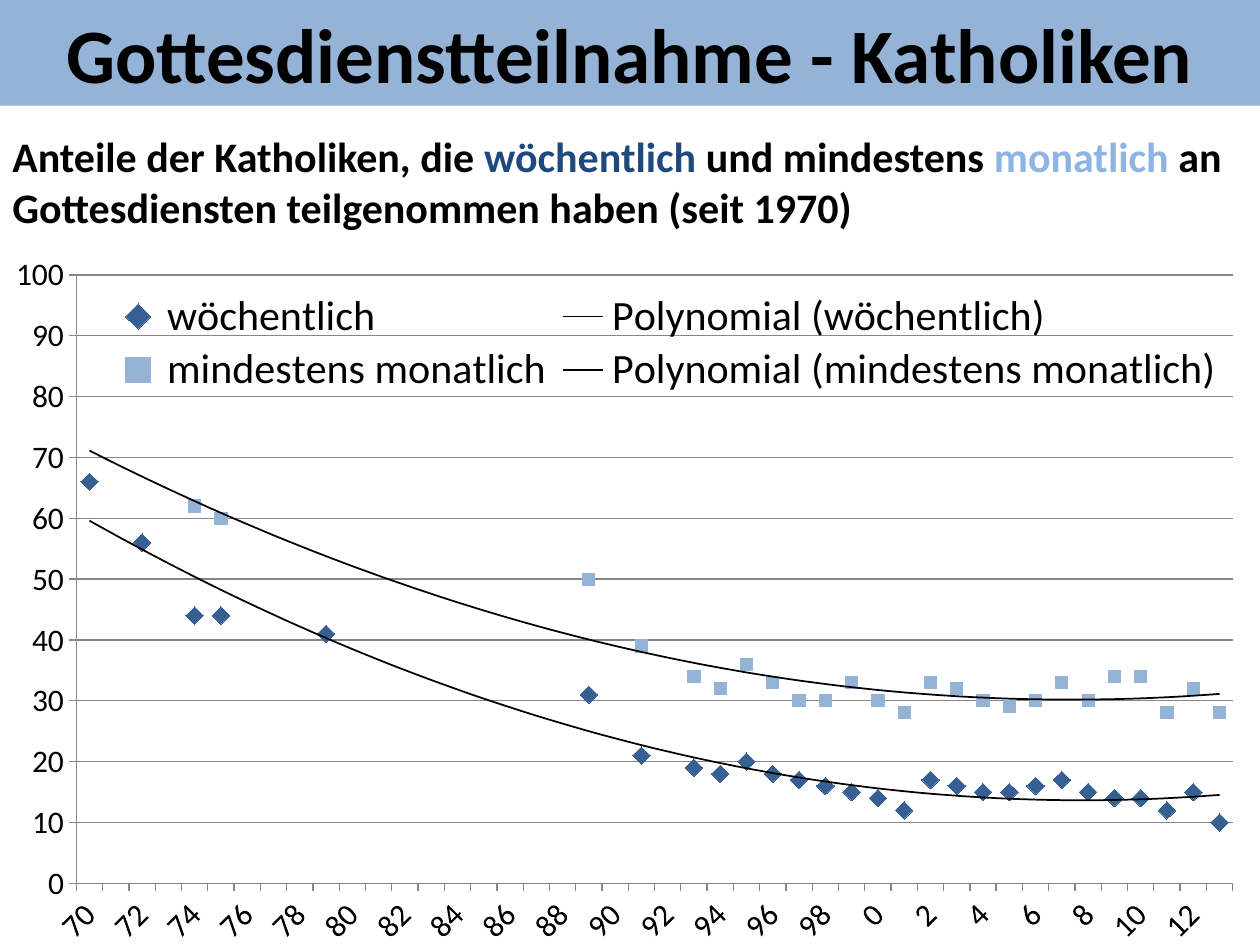
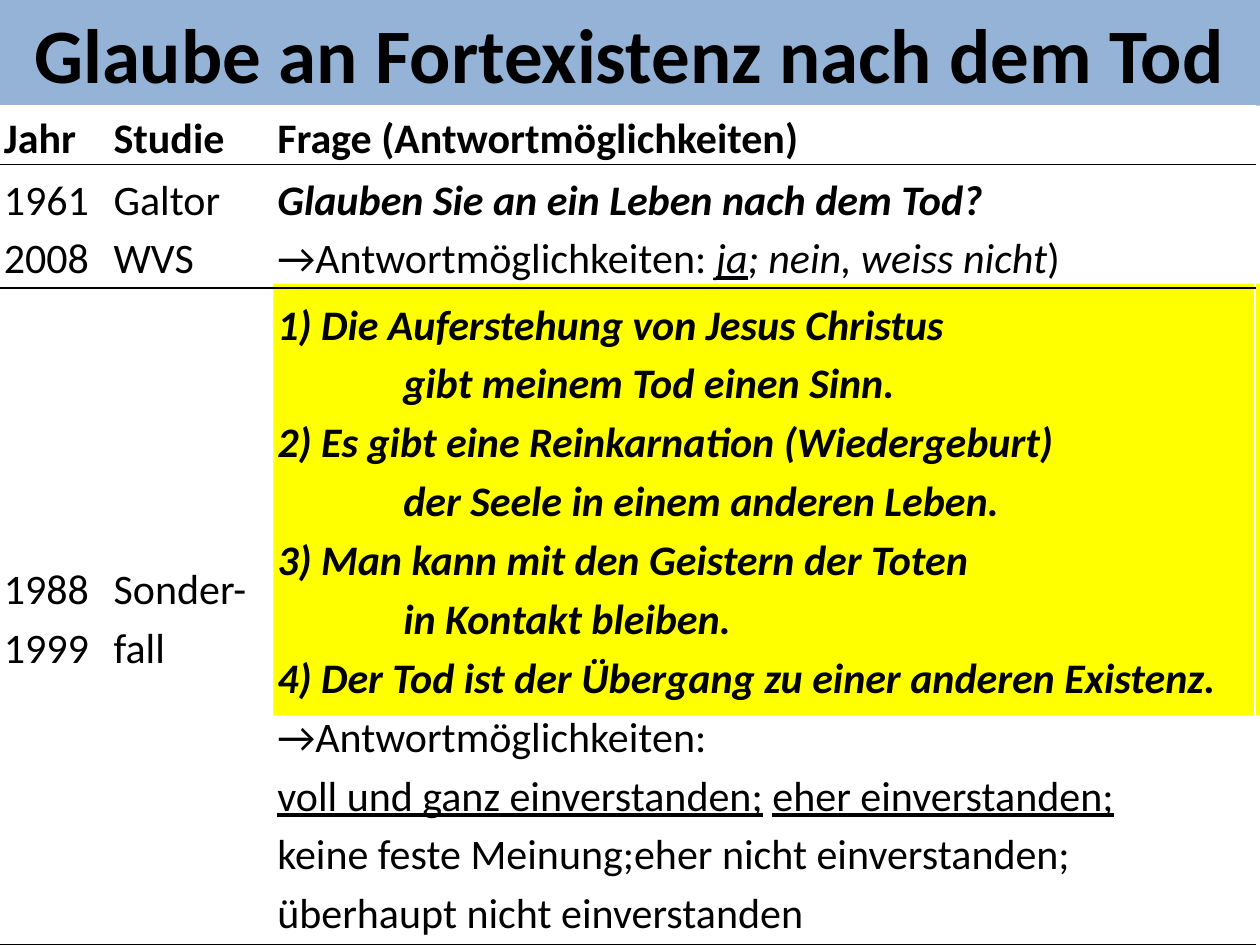
from lxml import etree
from pptx import Presentation
from pptx.chart import data as chart_data
from pptx.dml.color import RGBColor
from pptx.enum import chart as chart_enum
from pptx.enum import shapes, text
from pptx.oxml import parse_xml
from pptx.oxml.ns import nsdecls, qn
from pptx.util import Cm, Pt

BAND = RGBColor(0x95, 0xB3, 0xD7)
WEEKLY = RGBColor(0x37, 0x60, 0x92)
WEEKLY_WORD = RGBColor(0x1F, 0x49, 0x7D)
MONTHLY_WORD = RGBColor(0x8E, 0xB4, 0xE3)
GRID = RGBColor(0x86, 0x86, 0x86)
HIGHLIGHT = RGBColor(0xFF, 0xFF, 0x00)
BLACK = RGBColor(0, 0, 0)
WHITE = RGBColor(0xFF, 0xFF, 0xFF)
FONT = "Calibri"
WIDTH, HEIGHT, BAND_HEIGHT = Cm(25.4), Cm(19.05), Cm(2.13)

ATTENDANCE_TITLE = "Gottesdienstteilnahme - Katholiken"
ATTENDANCE_INTRO = [
    ("Anteile der Katholiken, die ", BLACK),
    ("wöchentlich ", WEEKLY_WORD),
    ("und mindestens ", BLACK),
    ("monatlich ", MONTHLY_WORD),
    ("an Gottesdiensten teilgenommen haben (seit 1970)", BLACK),
]
YEARS = [str(year % 100) for year in range(1970, 2014)]
ATTENDANCE = [
    ("wöchentlich", chart_enum.XL_MARKER_STYLE.DIAMOND, 10, WEEKLY,
     {70: 66, 72: 56, 74: 44, 75: 44, 79: 41, 89: 31, 91: 21},
     [19, 18, 20, 18, 17, 16, 15, 14, 12, 17, 16, 15, 15, 16, 17, 15, 14, 14, 12, 15, 10]),
    ("mindestens monatlich", chart_enum.XL_MARKER_STYLE.SQUARE, 7, BAND,
     {74: 62, 75: 60, 89: 50, 91: 39},
     [34, 32, 36, 33, 30, 30, 33, 30, 28, 33, 32, 30, 29, 30, 33, 30, 34, 34, 28, 32, 28]),
]
PLOT_AREA = (0.05, 0.02, 0.94, 0.89)
LEGEND_AREA = (0.07, 0.04, 0.92, 0.16)

BELIEF_TITLE = "Glaube an Fortexistenz nach dem Tod"
COLUMN_WIDTHS = [2.21, 3.3, 19.89]
ROW_HEIGHTS = [1.19, 2.49, 13.23]
STATEMENTS = [
    ("1) Die Auferstehung von Jesus Christus", "gibt meinem Tod einen Sinn."),
    ("2) Es gibt eine Reinkarnation (Wiedergeburt)", "der Seele in einem anderen Leben."),
    ("3) Man kann mit den Geistern der Toten", "in Kontakt bleiben."),
    ("4) Der Tod ist der Übergang zu einer anderen Existenz.",),
]
STATEMENT_LINES = [
    (2.54 if position else 0, [(line, "bi")])
    for statement in STATEMENTS
    for position, line in enumerate(statement)
]


def lines(style, *texts):
    return [(0, [(line, style)]) for line in texts]


STUDIES = [
    [lines("b", "Jahr"), lines("b", "Studie"), lines("b", "Frage (Antwortmöglichkeiten)")],
    [
        lines("", "1961", "2008"),
        lines("", "Galtor WVS"),
        lines("bi", "Glauben Sie an ein Leben nach dem Tod?")
        + [(0, [("→Antwortmöglichkeiten: ", ""), ("ja", "iu"),
                ("; nein, weiss nicht", "i"), (")", "")])],
    ],
    [
        lines("", "1988", "1999"),
        lines("", "Sonder-fall"),
        STATEMENT_LINES
        + lines("", "→Antwortmöglichkeiten:")
        + [(0, [("voll und ganz einverstanden;", "u"), (" ", ""), ("eher einverstanden;", "u")])]
        + lines("", "keine feste Meinung;eher nicht einverstanden; "
                    "überhaupt nicht einverstanden"),
    ],
]


def set_font(font, size, color=BLACK, bold=None):
    font.name, font.size, font.bold = FONT, Pt(size), bold
    font.color.rgb = color


def add_titled_slide(deck, heading):
    slide = deck.slides.add_slide(deck.slide_layouts[5])
    title = slide.shapes.title
    title.left, title.top, title.width, title.height = 0, 0, WIDTH, BAND_HEIGHT
    title.fill.solid()
    title.fill.fore_color.rgb = BAND
    frame = title.text_frame
    frame.text = heading
    frame.auto_size = text.MSO_AUTO_SIZE.NONE
    frame.vertical_anchor = text.MSO_ANCHOR.MIDDLE
    frame.paragraphs[0].alignment = text.PP_ALIGN.CENTER
    set_font(frame.paragraphs[0].font, 44, bold=True)
    return slide


def layout_xml(area, target=""):
    modes = "".join(f'<c:{side}Mode val="edge"/>' for side in "xy")
    sizes = "".join(f'<c:{side} val="{value}"/>' for side, value in zip("xywh", area))
    return parse_xml(f'<c:layout {nsdecls("c")}><c:manualLayout>{target}{modes}{sizes}'
                     "</c:manualLayout></c:layout>")


def add_trend(series):
    trend = parse_xml(
        f'<c:trendline {nsdecls("c", "a")}><c:spPr><a:ln w="12700"><a:solidFill>'
        f'<a:srgbClr val="{BLACK}"/></a:solidFill></a:ln></c:spPr>'
        '<c:trendlineType val="poly"/><c:order val="2"/>'
        '<c:dispRSqr val="0"/><c:dispEq val="0"/></c:trendline>')
    series._element.find(qn("c:cat")).addprevious(trend)


def replace_layout(parent, layout, before):
    for old in parent.findall(qn("c:layout")):
        parent.remove(old)
    parent.find(qn(before)).addprevious(layout)


def add_attendance_chart(slide):
    figures = chart_data.CategoryChartData(number_format="0")
    figures.categories = YEARS
    for name, _, _, _, early, since_1993 in ATTENDANCE:
        figures.add_series(name, [early.get(year) for year in range(70, 93)] + since_1993)
    chart = slide.shapes.add_chart(
        chart_enum.XL_CHART_TYPE.LINE_MARKERS,
        Cm(0.3), Cm(5.16), Cm(24.8), Cm(13.89), figures).chart
    chart.has_title = False
    set_font(chart.font, 10)
    chart.plots[0].vary_by_categories = False

    for series, (_, style, size, color, _, _) in zip(chart.plots[0].series, ATTENDANCE):
        series.smooth = False
        series.format.line.fill.background()
        series.marker.style, series.marker.size = style, size
        series.marker.format.fill.solid()
        series.marker.format.fill.fore_color.rgb = color
        series.marker.format.line.color.rgb = color
        add_trend(series)

    years, percent = chart.category_axis, chart.value_axis
    for axis in (years, percent):
        set_font(axis.tick_labels.font, 18)
        axis.major_tick_mark = chart_enum.XL_TICK_MARK.OUTSIDE
        axis.format.line.color.rgb = GRID
    years._element.find(qn("c:txPr")).find(qn("a:bodyPr")).set("rot", "-2700000")
    percent.minimum_scale, percent.maximum_scale, percent.major_unit = 0, 100, 10
    percent.tick_labels.number_format = "0"
    percent.tick_labels.number_format_is_linked = False
    percent.has_major_gridlines = True
    percent.major_gridlines.format.line.color.rgb = GRID

    chart.has_legend = True
    chart.legend.position = chart_enum.XL_LEGEND_POSITION.RIGHT
    chart.legend.include_in_layout = False
    set_font(chart.legend.font, 24)
    replace_layout(chart.legend._element, layout_xml(LEGEND_AREA), "c:overlay")
    plot_area = chart._chartSpace.chart.plotArea
    replace_layout(plot_area, layout_xml(PLOT_AREA, '<c:layoutTarget val="inner"/>'),
                   "c:lineChart")


def build_attendance(deck):
    slide = add_titled_slide(deck, ATTENDANCE_TITLE)
    add_attendance_chart(slide)
    intro = slide.shapes.add_textbox(0, Cm(2.51), WIDTH, Cm(2.31)).text_frame
    intro.word_wrap = True
    paragraph = intro.paragraphs[0]
    set_font(paragraph.font, 24, bold=True)
    for words, color in ATTENDANCE_INTRO:
        run = paragraph.add_run()
        run.text = words
        run.font.color.rgb = color


def set_borders(cell, top):
    properties = cell._tc.get_or_add_tcPr()
    for place, (side, color) in enumerate(
            [("L", WHITE), ("R", WHITE), ("T", top), ("B", BLACK)]):
        line = etree.Element(qn(f"a:ln{side}"), w=str(Pt(1)))
        fill = etree.SubElement(line, qn("a:solidFill"))
        etree.SubElement(fill, qn("a:srgbClr"), val=str(color))
        properties.insert(place, line)


def fill_cell(cell, content, alignment):
    cell.margin_left = cell.margin_right = Cm(0.18)
    cell.margin_top = cell.margin_bottom = 0
    cell.vertical_anchor = text.MSO_ANCHOR.MIDDLE
    cell.fill.background()
    frame = cell.text_frame
    for number, (indent, runs) in enumerate(content):
        paragraph = frame.add_paragraph() if number else frame.paragraphs[0]
        paragraph.alignment = alignment
        paragraph.line_spacing = 1.15
        if indent:
            paragraph._p.get_or_add_pPr().set("marL", str(Cm(indent)))
        for words, style in runs:
            run = paragraph.add_run()
            run.text = words
            set_font(run.font, 24, bold="b" in style)
            run.font.italic = "i" in style
            run.font.underline = "u" in style


def build_belief(deck):
    slide = add_titled_slide(deck, BELIEF_TITLE)
    statements = slide.shapes.add_shape(
        shapes.MSO_SHAPE.RECTANGLE, Cm(5.51), Cm(5.72), Cm(19.89), Cm(8.71))
    statements.shadow.inherit = False
    statements.fill.solid()
    statements.fill.fore_color.rgb = HIGHLIGHT
    statements.line.fill.background()

    studies = slide.shapes.add_table(
        len(ROW_HEIGHTS), len(COLUMN_WIDTHS), Cm(-0.1), BAND_HEIGHT,
        Cm(sum(COLUMN_WIDTHS)), Cm(sum(ROW_HEIGHTS))).table
    studies.first_row = studies.horz_banding = False
    for column, width in zip(studies.columns, COLUMN_WIDTHS):
        column.width = Cm(width)
    for r, (height, study) in enumerate(zip(ROW_HEIGHTS, STUDIES)):
        studies.rows[r].height = Cm(height)
        for c, content in enumerate(study):
            is_question = r > 0 and c == 2
            alignment = text.PP_ALIGN.LEFT if is_question else text.PP_ALIGN.JUSTIFY
            fill_cell(studies.cell(r, c), content, alignment)
            set_borders(studies.cell(r, c), BLACK if r else WHITE)


def main():
    deck = Presentation()
    deck.slide_width, deck.slide_height = WIDTH, HEIGHT
    build_attendance(deck)
    build_belief(deck)
    deck.save("out.pptx")


if __name__ == "__main__":
    main()
